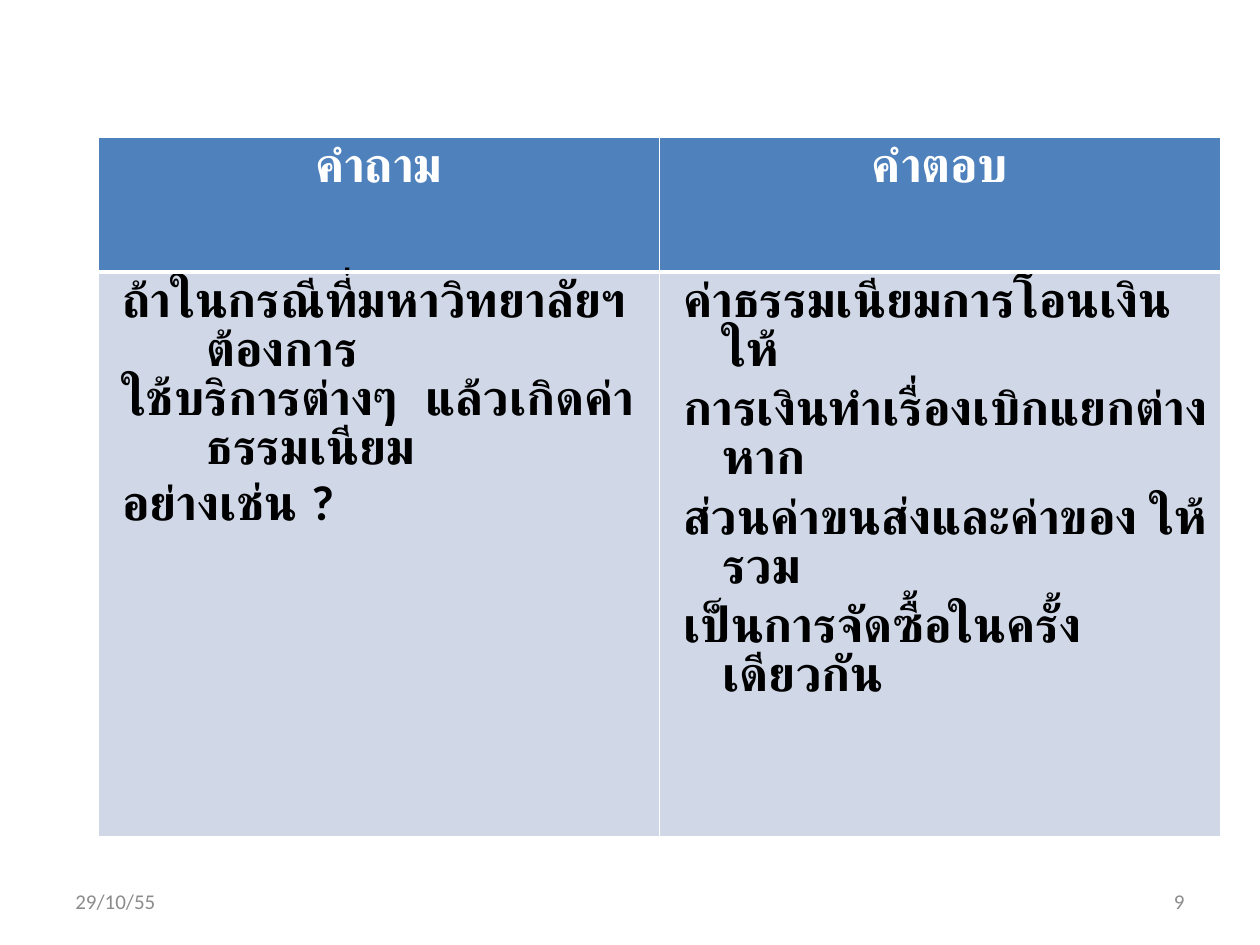
from lxml.etree import SubElement
from pptx import Presentation
from pptx.dml.color import RGBColor
from pptx.enum.lang import MSO_LANGUAGE_ID
from pptx.enum.text import MSO_ANCHOR, PP_ALIGN
from pptx.oxml.ns import qn
from pptx.util import Inches, Pt

FONT = "Calibri"
WHITE = RGBColor(0xFF, 0xFF, 0xFF)
BLACK = RGBColor(0, 0, 0)
GREY = RGBColor(0x8C, 0x8C, 0x8C)
BLUE = RGBColor(0x4F, 0x81, 0xBD)
PALE_BLUE = RGBColor(0xD0, 0xD8, 0xE8)

HEADINGS = ["คำถาม", "คำตอบ"]
QUESTION = [
    "ถ้าในกรณีที่มหาวิทยาลัยฯ ต้องการ",
    "ใช้บริการต่างๆ  แล้วเกิดค่าธรรมเนียม",
    "อย่างเช่น ?",
]
ANSWER = [
    "ค่าธรรมเนียมการโอนเงินให้",
    "การเงินทำเรื่องเบิกแยกต่างหาก",
    "ส่วนค่าขนส่งและค่าของ ให้รวม",
    "เป็นการจัดซื้อในครั้งเดียวกัน",
]


def format_runs(paragraph, size, color, bold=False):
    for run in paragraph.runs:
        run.font.name = FONT
        run.font.size = Pt(size)
        run.font.bold = bold
        run.font.color.rgb = color


def set_borders(cell, bottom_width=1):
    """Draw white cell borders; call before filling, as borders come first in the XML."""
    properties = cell._tc.get_or_add_tcPr()
    widths = {"lnL": 1, "lnR": 1, "lnT": 1, "lnB": bottom_width}
    for side, width in widths.items():
        line = SubElement(properties, qn(f"a:{side}"), w=str(Pt(width)))
        fill = SubElement(line, qn("a:solidFill"))
        SubElement(fill, qn("a:srgbClr"), val=str(WHITE))


def fill_cell(cell, lines, fill, color, bottom_width=1):
    """Style a cell and return its paragraphs."""
    set_borders(cell, bottom_width)
    cell.fill.solid()
    cell.fill.fore_color.rgb = fill
    cell.text_frame.text = "\n".join(lines)
    for paragraph in cell.text_frame.paragraphs:
        format_runs(paragraph, 28, color, bold=True)
        for run in paragraph.runs:
            run.font.language_id = MSO_LANGUAGE_ID.THAI
    return cell.text_frame.paragraphs


def indent(paragraphs, left, first, space_before=0):
    for paragraph in paragraphs:
        properties = paragraph._p.get_or_add_pPr()
        properties.set("marL", str(Inches(left)))
        properties.set("indent", str(Inches(first)))
        paragraph.space_before = Pt(space_before)


def add_question_table(slide, left, top, width, height):
    table = slide.shapes.add_table(2, 2, left, top, width, height).table
    for column in table.columns:
        column.width = width // 2
    table.rows[0].height = Inches(1.07)
    table.rows[1].height = height - table.rows[0].height

    for index, heading in enumerate(HEADINGS):
        for paragraph in fill_cell(table.cell(0, index), [heading], BLUE, WHITE, 3):
            paragraph.alignment = PP_ALIGN.CENTER
    # The top edge of the body row shares the heavier heading rule.
    indent(fill_cell(table.cell(1, 0), QUESTION, PALE_BLUE, BLACK), 0.76, -0.67)
    indent(fill_cell(table.cell(1, 1), ANSWER, PALE_BLUE, BLACK), 0.4, -0.31, 6)
    for index in range(2):
        top_line = table.cell(1, index)._tc.tcPr.find(qn("a:lnT"))
        top_line.set("w", str(Pt(3)))


def add_footer(slide, left, top, width, height):
    """Place the date at the left end and the slide number at the right end."""
    box_width = Inches(2.33)
    parts = [
        (left, "29/10/55", PP_ALIGN.LEFT),
        (left + width - box_width, "9", PP_ALIGN.RIGHT),
    ]
    for box_left, text, alignment in parts:
        text_frame = slide.shapes.add_textbox(box_left, top, box_width, height).text_frame
        text_frame.word_wrap = True
        text_frame.vertical_anchor = MSO_ANCHOR.MIDDLE
        text_frame.text = text
        paragraph = text_frame.paragraphs[0]
        paragraph.alignment = alignment
        format_runs(paragraph, 12, GREY)


def main():
    presentation = Presentation()
    presentation.slide_width = Inches(10)
    presentation.slide_height = Inches(7.5)
    slide = presentation.slides.add_slide(presentation.slide_layouts[6])
    add_footer(slide, Inches(0.5), Inches(6.95), Inches(9), Inches(0.4))
    add_question_table(slide, Inches(0.78), Inches(1.09), Inches(8.91), Inches(5.55))
    presentation.save("out.pptx")


if __name__ == "__main__":
    main()
